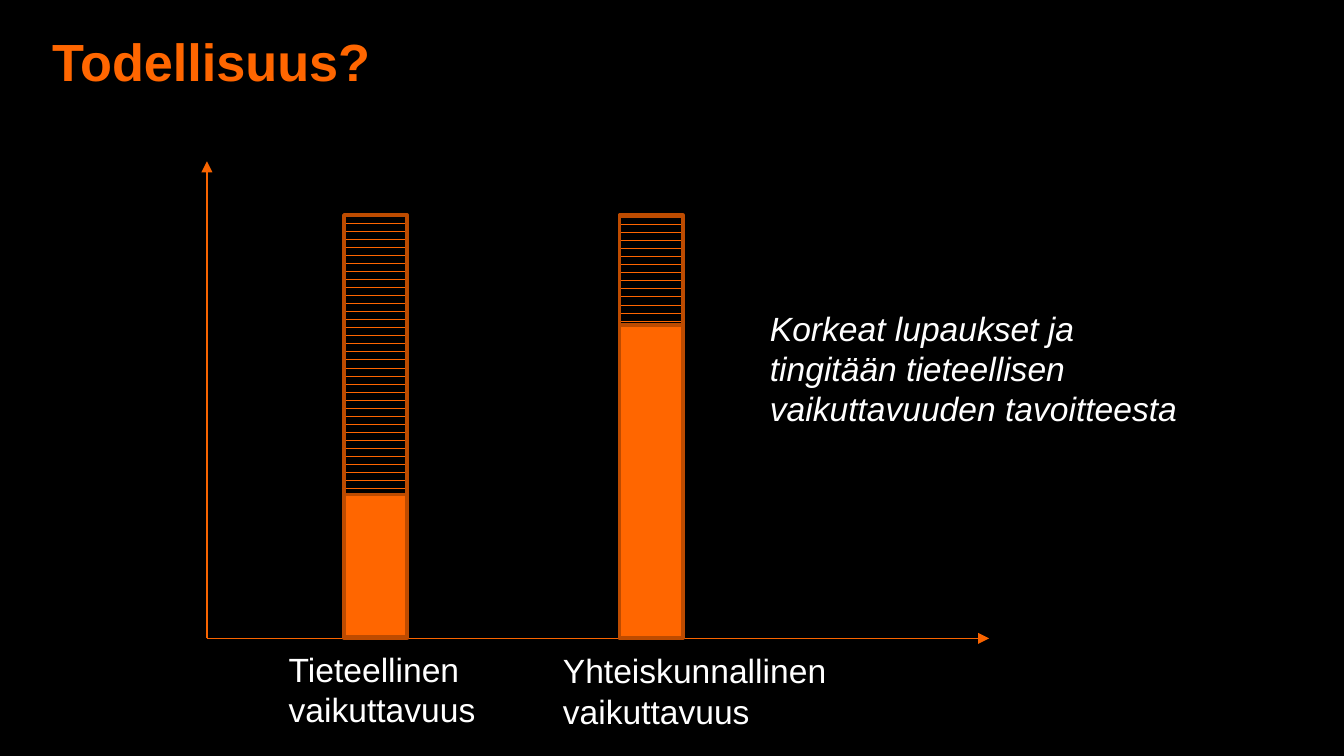
import pptx
import pptx.dml.color
import pptx.enum.dml
import pptx.enum.shapes
import pptx.enum.text
import pptx.oxml.ns
import pptx.util
from lxml import etree

Inches = pptx.util.Inches
Pt = pptx.util.Pt
RGBColor = pptx.dml.color.RGBColor
qn = pptx.oxml.ns.qn

BLACK = RGBColor(0x00, 0x00, 0x00)
WHITE = RGBColor(0xFF, 0xFF, 0xFF)
ORANGE = RGBColor(0xFF, 0x66, 0x00)
AXIS = RGBColor(0xF9, 0x64, 0x00)
BORDER = RGBColor(0xBD, 0x4B, 0x00)

# Content: text with left, top, width, height
TITLE = ("Todellisuus?", 0.29, 0.06, 7.95, 0.78)
LABELS = [
    ("Tieteellinen vaikuttavuus", 2.05, 4.78, 1.97, 0.71),
    ("Yhteiskunnallinen vaikuttavuus", 4.09, 4.79, 2.4, 0.71),
]
COMMENT = ("Korkeat lupaukset ja tingitään tieteellisen vaikuttavuuden tavoitteesta",
           5.63, 2.24, 3.39, 1.01)

# Bar parts from back to front: left, top, height, hatched
BAR_WIDTH = 0.47
FULL_BARS = [(2.56, 1.6, 3.15, True), (4.61, 1.6, 3.15, False)]
FRONT_PARTS = [(2.56, 3.68, 1.06, False), (4.61, 1.61, 0.81, True)]

ORIGIN = (1.54, 4.75)
AXIS_ENDS = [(1.54, 1.2), (7.36, 4.75)]


def add_text(slide, content, size=18, color=WHITE, bold=False, italic=False):
    text, *box = content
    sp = slide.shapes.add_textbox(*map(Inches, box))
    tf = sp.text_frame
    tf.word_wrap = True
    tf.text = text
    font = tf.paragraphs[0].runs[0].font
    font.name, font.size, font.color.rgb = "Arial", Pt(size), color
    font.bold, font.italic = bold, italic
    return tf


def add_axis(slide, end):
    line = slide.shapes.add_connector(
        pptx.enum.shapes.MSO_CONNECTOR.STRAIGHT, *map(Inches, ORIGIN + end))
    line.line.color.rgb = AXIS
    line.line.width = Pt(0.75)
    ln = line._element.spPr.find(qn("a:ln"))
    etree.SubElement(ln, qn("a:tailEnd"), type="triangle")
    etree.SubElement(line._element.spPr, qn("a:effectLst"))


def add_bar_part(slide, left, top, height, hatched):
    sp = slide.shapes.add_shape(
        pptx.enum.shapes.MSO_SHAPE.RECTANGLE,
        *map(Inches, (left, top, BAR_WIDTH, height)))
    sp.shadow.inherit = False
    if hatched:
        sp.fill.patterned()
        sp.fill.pattern = pptx.enum.dml.MSO_PATTERN.DASHED_HORIZONTAL
        sp.fill.back_color.rgb = BLACK
    else:
        sp.fill.solid()
    sp.fill.fore_color.rgb = ORANGE
    sp.line.color.rgb = BORDER
    sp.line.width = Pt(2)


# 16:9 slide on black
prs = pptx.Presentation()
prs.slide_width = Inches(10)
prs.slide_height = prs.slide_width * 9 // 16
s = prs.slides.add_slide(prs.slide_layouts[6])
s.background.fill.solid()
s.background.fill.fore_color.rgb = BLACK

# Title
tf = add_text(s, TITLE, size=28, color=ORANGE, bold=True)
tf.vertical_anchor = pptx.enum.text.MSO_ANCHOR.MIDDLE

# Axes
for end in AXIS_ENDS:
    add_axis(s, end)

# Bars and their labels
for part in FULL_BARS:
    add_bar_part(s, *part)
for label in LABELS:
    add_text(s, label)
for part in FRONT_PARTS:
    add_bar_part(s, *part)

# Comment
add_text(s, COMMENT, italic=True)

prs.save("out.pptx")
